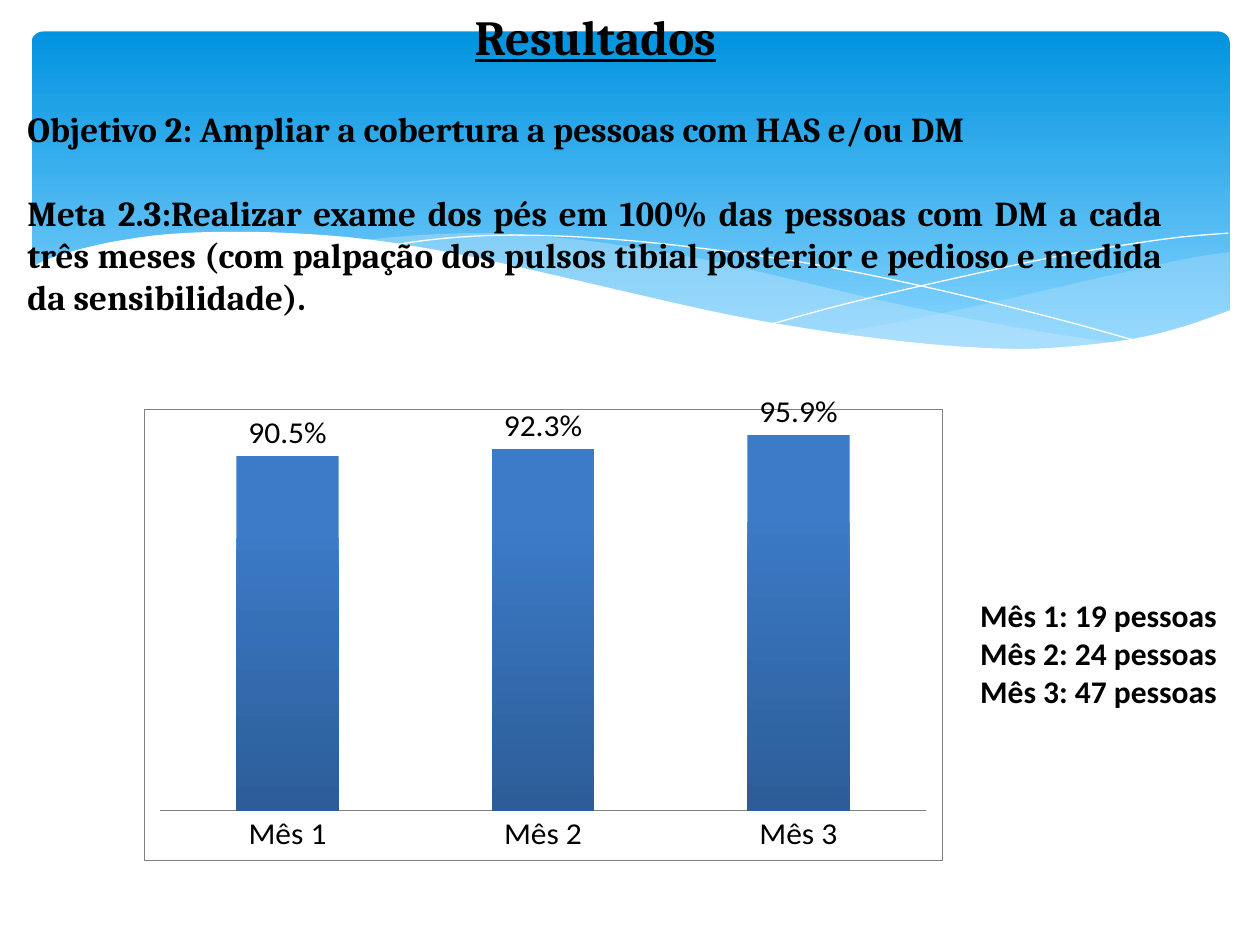
from dataclasses import dataclass
from typing import Optional

import pptx
import pptx.chart.data
import pptx.dml.color
import pptx.enum.chart
import pptx.enum.shapes
import pptx.enum.text
import pptx.util
from lxml import etree
from pptx.oxml.ns import qn

Pt = pptx.util.Pt
ALIGN = pptx.enum.text.PP_ALIGN


@dataclass
class Wave:
    """Smooth curves joined by straight lines; an open one is a hairline."""
    curves: list
    fill: Optional[str] = None
    alpha: int = 100


@dataclass
class Para:
    text: str
    size: float
    font: str
    align: ALIGN = ALIGN.LEFT
    underline: bool = False
    before: float = 0


WAVES = [
    Wave([[(702.7, 144), (682.6, 146.9), (652.3, 153.4), (619.9, 160.6), (560.9, 174.2),
           (508.3, 185), (475.9, 190.8)],
          [(475.9, 190.8), (507.6, 195.1), (545, 198.7), (578.2, 200.2), (614.9, 198.7),
           (651.6, 193.7), (678.2, 186.5), (702.7, 177.8)]], "C6E7FC", 29),
    Wave([[(643, 196.6), (602.6, 190.8), (558, 182.9), (508.3, 172.8), (452.9, 159.8),
           (409.7, 149.8), (370.1, 142.6), (334.8, 137.5), (302.4, 134.6), (273.6, 133.2),
           (236.2, 134.6), (205.9, 137.5)],
          [(205.9, 137.5), (246.2, 143.3), (290.9, 151.9), (323.3, 159.8), (381.6, 172.8),
           (432.7, 183.6), (478.8, 191.5), (519.8, 197.3), (556.6, 199.4), (589, 200.2),
           (617, 199.4), (643, 196.6)]], "C6E7FC", 40),
    Wave([[(222.5, 140.4), (247.7, 136.8), (278.6, 134.6), (311.8, 134.6), (352.1, 136.8),
           (400.3, 141.8), (457.9, 149.8), (523.4, 162.7), (598.3, 180.7), (653, 195.8)]]),
    Wave([[(441.4, 185), (483.8, 173.5), (538.6, 160.6), (601.9, 146.9), (644.4, 139.7),
           (675.4, 135.4), (702, 133.2)]]),
    Wave([[(703.4, 177.1), (676.8, 186.5), (647.3, 193.7), (612, 198), (582.5, 199.4),
           (547.9, 198), (509.8, 194.4), (466.6, 188.6), (416.9, 180), (362.2, 167.8),
           (321.8, 158.4), (262.8, 145.4), (210.2, 136.8), (165.6, 133.2), (127.4, 132.5),
           (95, 133.9), (68.4, 137.5), (48.2, 141.8), (28.8, 147.6), (16.6, 153.4)],
          [(16.6, 236.9), (703.4, 236.9)]], "FFFFFF"),
]

HEADING = [
    Para("Resultados", 28, "Cambria", ALIGN.CENTER, True),
    Para("Objetivo 2: Ampliar a cobertura a pessoas com HAS e/ou DM", 20, "Cambria",
         ALIGN.JUSTIFY, before=24),
    Para("Meta 2.3:Realizar exame dos pés em 100% das pessoas com DM a cada três meses "
         "(com palpação dos pulsos tibial posterior e pedioso e medida da sensibilidade).",
         20, "Cambria", ALIGN.JUSTIFY, before=24),
]
COUNTS = [Para(f"Mês {i}: {n} pessoas", 18, "Calibri")
          for i, n in enumerate((19, 24, 47), 1)]


def rgb(value: str) -> pptx.dml.color.RGBColor:
    return pptx.dml.color.RGBColor.from_string(value)


def set_gradient(fill, stops: list) -> None:
    fill.gradient()
    fill.gradient_angle = 270
    for stop, (position, color) in zip(fill.gradient_stops, stops):
        stop.position = position
        stop.color.rgb = rgb(color)


def smooth(knots: list, steps: int = 4) -> list:
    """Catmull-Rom points through the knots."""
    if len(knots) < 3:
        return knots
    ends = [knots[0], *knots, knots[-1]]
    points = []
    for a, b, c, d in zip(ends, ends[1:], ends[2:], ends[3:]):
        for t in (i / steps for i in range(steps)):
            points.append(tuple(
                (2 * q + (r - p) * t + (2 * p - 5 * q + 4 * r - s) * t ** 2
                 + (3 * q - p - 3 * r + s) * t ** 3) / 2
                for p, q, r, s in zip(a, b, c, d)))
    return points + [knots[-1]]


def add_wave(s, wave: Wave) -> None:
    points = [(Pt(x), Pt(y)) for curve in wave.curves for x, y in smooth(curve)]
    builder = s.shapes.build_freeform(*points[0])
    builder.add_line_segments(points[1:], close=wave.fill is not None)
    sp = builder.convert_to_shape()
    sp.shadow.inherit = False
    if wave.fill is None:
        sp.fill.background()
        sp.line.color.rgb = rgb("FFFFFF")
        sp.line.width = Pt(0)
        return
    sp.line.fill.background()
    sp.fill.solid()
    sp.fill.fore_color.rgb = rgb(wave.fill)
    if wave.alpha < 100:
        color = sp.fill._xPr.find(qn("a:solidFill"))[0]
        etree.SubElement(color, qn("a:alpha")).set("val", str(wave.alpha * 1000))


def add_text(s, box: tuple, paras: list) -> None:
    tf = s.shapes.add_textbox(*map(Pt, box)).text_frame
    tf.word_wrap = True
    for i, para in enumerate(paras):
        p = tf.add_paragraph() if i else tf.paragraphs[0]
        p.text = para.text
        p.alignment = para.align
        p.space_before = Pt(para.before)
        font = p.runs[0].font
        font.name, font.size, font.bold = para.font, Pt(para.size), True
        font.underline = para.underline
        font.color.rgb = rgb("000000")


def style_font(font, size: float) -> None:
    font.name, font.size = "Calibri", Pt(size)
    font.color.rgb = rgb("000000")


def frame_chart(chart) -> None:
    """White chart area with a thin border, and a fixed inner plot area."""
    layout = "".join(f'<c:{tag} val="{val}"/>' for tag, val in (
        ("layoutTarget", "inner"), ("xMode", "edge"), ("yMode", "edge"),
        ("x", 0.02), ("y", 0.02), ("w", 0.96), ("h", 0.87)))
    ns = 'xmlns:c="http://schemas.openxmlformats.org/drawingml/2006/chart"'
    plot_area = chart._chartSpace.chart.plotArea
    for old in plot_area.findall(qn("c:layout")):
        plot_area.remove(old)
    plot_area.insert(0, etree.fromstring(
        f"<c:layout {ns}><c:manualLayout>{layout}</c:manualLayout></c:layout>"))
    area = etree.fromstring(
        f'<c:spPr {ns} xmlns:a="http://schemas.openxmlformats.org/drawingml/2006/main">'
        '<a:solidFill><a:srgbClr val="FFFFFF"/></a:solidFill><a:ln w="3175"><a:solidFill>'
        '<a:srgbClr val="808080"/></a:solidFill></a:ln></c:spPr>')
    chart._chartSpace.chart.addnext(area)


def add_exam_chart(s, box: tuple) -> None:
    data = pptx.chart.data.CategoryChartData(number_format="0.0%")
    data.categories = ["Mês 1", "Mês 2", "Mês 3"]
    data.add_series("Series 1", (0.905, 0.923, 0.959))
    kind = pptx.enum.chart.XL_CHART_TYPE.COLUMN_CLUSTERED
    chart = s.shapes.add_chart(kind, *map(Pt, box), data).chart
    style_font(chart.font, 10)
    chart.has_legend = chart.has_title = False
    frame_chart(chart)

    # Axes
    value = chart.value_axis
    value.minimum_scale, value.maximum_scale, value.major_unit = 0, 1, 0.1
    value.has_major_gridlines = value.visible = False
    category = chart.category_axis
    category.major_tick_mark = pptx.enum.chart.XL_TICK_MARK.NONE
    category.format.line.color.rgb = rgb("808080")
    category.format.line.width = Pt(0.25)
    style_font(category.tick_labels.font, 18)

    # Columns and labels
    plot = chart.plots[0]
    plot.gap_width, plot.overlap, plot.vary_by_categories = 150, -25, False
    set_gradient(plot.series[0].format.fill, [(0.2, "3C7BC7"), (1, "2C5D98")])
    plot.has_data_labels = True
    labels = plot.data_labels
    labels.show_value = True
    labels.number_format, labels.number_format_is_linked = "0.0%", False
    labels.position = pptx.enum.chart.XL_LABEL_POSITION.OUTSIDE_END
    style_font(labels.font, 18)


def main() -> None:
    prs = pptx.Presentation()
    prs.slide_width, prs.slide_height = Pt(720), Pt(540)
    s = prs.slides.add_slide(prs.slide_layouts[6])

    # Blue banner and its waves
    sp = s.shapes.add_shape(pptx.enum.shapes.MSO_SHAPE.ROUNDED_RECTANGLE,
                            Pt(18), Pt(18), Pt(684.7), Pt(194.4))
    sp.adjustments[0] = 0.034
    sp.shadow.inherit = False
    sp.line.fill.background()
    set_gradient(sp.fill, [(0, "0293E0"), (0.9, "83D3FE")])
    for wave in WAVES:
        add_wave(s, wave)

    # Text and chart
    add_text(s, (8.6, 0, 663.1, 548), HEADING)
    add_text(s, (553, 337, 209.5, 72.7), COUNTS)
    add_exam_chart(s, (82.1, 224.6, 456.5, 267.1))
    prs.save("out.pptx")


if __name__ == "__main__":
    main()
